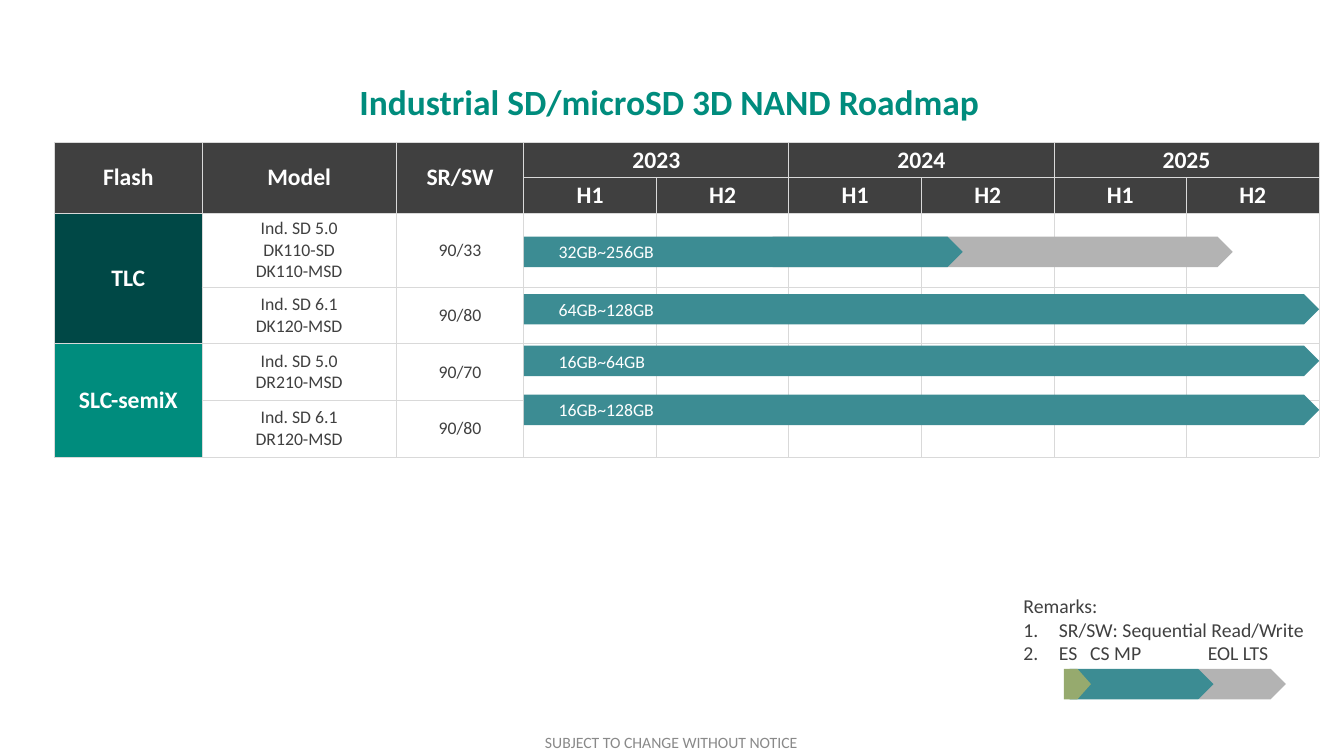
from lxml.etree import SubElement as Sub
from pptx import Presentation
from pptx.dml.color import RGBColor as RGB
from pptx.enum.shapes import MSO_SHAPE as Kind
from pptx.enum.text import MSO_ANCHOR as Anchor, PP_ALIGN as Align
from pptx.oxml.ns import qn
from pptx.util import Inches, Pt

INK = {
    "dark": "404040", "white": "FFFFFF", "rule": "D9D9D9", "note": "898989",
    "green": "008C7D", "deep": "004846", "teal": "3C8C93", "gray": "B3B3B3",
    "olive": "96AA6E",
}
WIDE, HIGH = 18.96, 10.67
LEFT, TOP = 0.77, 2.01
COLS = [2.08, 2.74, 1.8] + [1.87] * 6
ROWS = [0.5, 0.5, 1.04, 0.8, 0.8, 0.8]
START = LEFT + sum(COLS[:3])
FULL = sum(COLS[3:])
THICK = 0.43

YEARS = ["2023", "2024", "2025"]
MODELS = [
    (["Ind. SD 5.0", "DK110-SD", "DK110-MSD"], "90/33"),
    (["Ind. SD 6.1", "DK120-MSD"], "90/80"),
    (["Ind. SD 5.0", "DR210-MSD"], "90/70"),
    (["Ind. SD 6.1", "DR120-MSD"], "90/80"),
]
FLASH = [(2, "TLC", "deep"), (4, "SLC-semiX", "green")]
BARS = [
    (3.34, 6.19, "32GB~256GB"),
    (4.15, FULL, "64GB~128GB"),
    (4.88, FULL, "16GB~64GB"),
    (5.57, FULL, "16GB~128GB"),
]
LEGEND = [(16.91, 1.23, "gray"), (15.09, 2.03, "teal"), (15.01, 0.38, "olive")]


class Page:
    font = "Calibri"

    def __init__(self, deck):
        self.slide = deck.slides.add_slide(deck.slide_layouts[6])
        self.shapes = self.slide.shapes

    def color(self, name):
        return RGB.from_string(INK[name])

    def lines(self, frame, texts, size, ink, bold=False, align=Align.LEFT):
        for i, text in enumerate(texts):
            par = frame.add_paragraph() if i else frame.paragraphs[0]
            par.alignment = align
            run = par.add_run()
            run.text = text
            run.font.name = self.font
            run.font.size = Pt(size)
            run.font.bold = bold
            run.font.color.rgb = self.color(ink)

    def text(self, box, texts, size, ink, bold=False, align=Align.LEFT):
        shape = self.shapes.add_textbox(*map(Inches, box))
        shape.text_frame.word_wrap = True
        self.lines(shape.text_frame, texts, size, ink, bold, align)
        return shape

    def number(self, par, tabs=()):
        props = par._p.get_or_add_pPr()
        props.set("marL", str(Inches(0.5)))
        props.set("indent", str(-Inches(0.5)))
        Sub(props, qn("a:buFont"), typeface="+mj-lt")
        Sub(props, qn("a:buAutoNum"), type="arabicPeriod")
        if tabs:
            stops = Sub(props, qn("a:tabLst"))
            for tab in tabs:
                Sub(stops, qn("a:tab"), pos=str(Inches(tab)), algn="l")

    def bar(self, left, top, width, fill, text=None):
        box = map(Inches, (left, top, width, THICK))
        shape = self.shapes.add_shape(Kind.PENTAGON, *box)
        shape.shadow.inherit = False
        shape.fill.solid()
        shape.fill.fore_color.rgb = self.color(fill)
        shape.line.fill.background()
        if text:
            frame = shape.text_frame
            frame.margin_left = Inches(0.49)
            frame.vertical_anchor = Anchor.MIDDLE
            self.lines(frame, [text], 18, "white")
        return shape

    def table(self):
        box = map(Inches, (LEFT, TOP, sum(COLS), sum(ROWS)))
        grid = self.shapes.add_table(len(ROWS), len(COLS), *box).table
        grid.first_row = grid.horz_banding = False
        for col, width in zip(grid.columns, COLS):
            col.width = Inches(width)
        for row, height in zip(grid.rows, ROWS):
            row.height = Inches(height)
        for r in range(len(ROWS)):
            for c in range(len(COLS)):
                cell = grid.cell(r, c)
                self.paint(cell, "dark" if r < 2 else "white")
                self.edge(cell)
        return grid

    def paint(self, cell, fill):
        cell.fill.solid()
        cell.fill.fore_color.rgb = self.color(fill)

    def edge(self, cell):
        props = cell._tc.get_or_add_tcPr()
        for i, side in enumerate("LRTB"):
            line = Sub(props, qn("a:ln" + side), w=str(Pt(1)))
            Sub(Sub(line, qn("a:solidFill")), qn("a:srgbClr"), val=INK["rule"])
            props.insert(i, line)

    def head(self, cell, text):
        cell.vertical_anchor = Anchor.MIDDLE
        self.lines(cell.text_frame, [text], 24, "white", True, Align.CENTER)

    def body(self, cell, texts):
        cell.vertical_anchor = Anchor.MIDDLE
        cell.margin_left = cell.margin_right = Inches(0.12)
        cell.margin_top = cell.margin_bottom = Inches(0.06)
        self.lines(cell.text_frame, texts, 18, "dark", align=Align.CENTER)


def main():
    deck = Presentation()
    deck.slide_width, deck.slide_height = Inches(WIDE), Inches(HIGH)
    page = Page(deck)
    page.text((7.59, 10.29, 3.83, 0.37),
              ["SUBJECT TO CHANGE WITHOUT NOTICE"], 16, "note")

    grid = page.table()
    for c, name in enumerate(["Flash", "Model", "SR/SW"]):
        grid.cell(0, c).merge(grid.cell(1, c))
        page.head(grid.cell(0, c), name)
    for i, year in enumerate(YEARS):
        c = 3 + 2 * i
        grid.cell(0, c).merge(grid.cell(0, c + 1))
        page.head(grid.cell(0, c), year)
        for half in range(2):
            page.head(grid.cell(1, c + half), f"H{half + 1}")
    for r, name, fill in FLASH:
        grid.cell(r, 0).merge(grid.cell(r + 1, 0))
        for k in range(2):
            page.paint(grid.cell(r + k, 0), fill)
        page.head(grid.cell(r, 0), name)
    for r, (names, speed) in enumerate(MODELS, 2):
        page.body(grid.cell(r, 1), names)
        page.body(grid.cell(r, 2), [speed])

    page.text((1.45, 1.08, 15.99, 0.73),
              ["Industrial SD/microSD 3D NAND Roadmap"],
              36, "green", True, Align.CENTER)

    notes = page.text(
        (14.34, 8.33, 4.2, 1.11),
        ["Remarks:", "SR/SW: Sequential Read/Write", "ES\tCS MP\tEOL LTS"],
        20, "dark")
    pars = notes.text_frame.paragraphs
    page.number(pars[1])
    page.number(pars[2], (0.94, 2.6))
    keys = [page.bar(x, 9.44, w, fill) for x, w, fill in LEGEND]
    page.shapes.add_group_shape([notes] + keys)

    page.bar(10.9, BARS[0][0], 6.49, "gray")
    for top, width, text in BARS:
        page.bar(START, top, width, "teal", text)
    deck.save("out.pptx")


if __name__ == "__main__":
    main()
